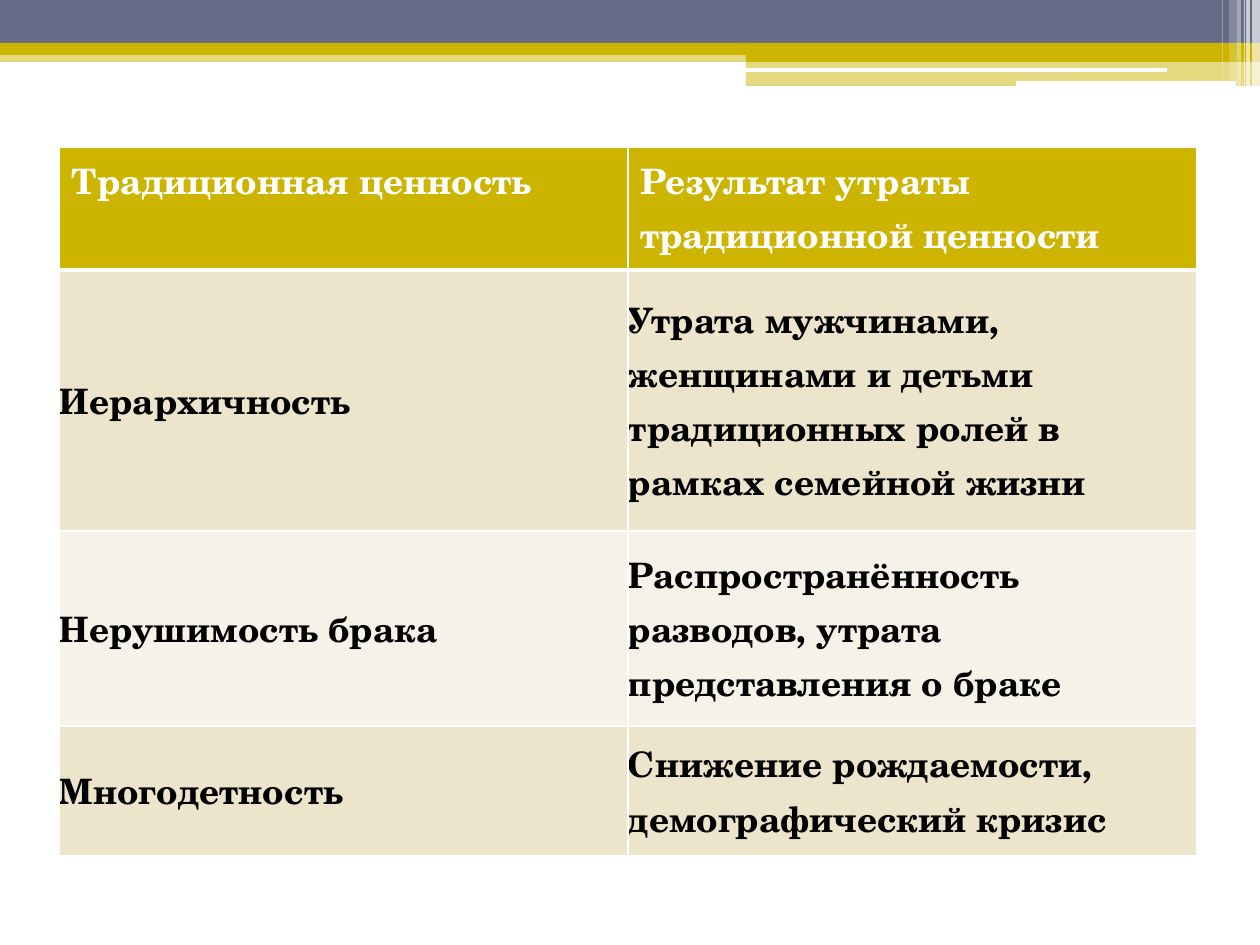
from typing import NamedTuple

from lxml.etree import SubElement
from pptx import Presentation
from pptx.dml.color import RGBColor
from pptx.enum.shapes import MSO_SHAPE as Kind
from pptx.enum.text import MSO_ANCHOR as Anchor
from pptx.oxml.ns import qn
from pptx.util import Emu, Pt

SCALE = 914400 / 126
FONT = "TeX Gyre Schola"
GOLD, SLATE, WHITE, BLACK = "CCB400", "646B86", "FFFFFF", "000000"
SAND, CREAM = "ECE5CC", "F6F2E7"


class Band(NamedTuple):
    left: int
    top: int
    width: int
    height: int
    color: str
    alpha: int = 100
    kind: Kind = Kind.RECTANGLE


class Row(NamedTuple):
    height: int
    fill: str
    texts: tuple[str, str]
    head: bool = False


BANDS = [
    Band(0, 50, 1260, 12, GOLD, 50),
    Band(0, 0, 1260, 43, SLATE),
    Band(0, 43, 1260, 12, GOLD),
    Band(746, 49, 514, 13, GOLD),
    Band(746, 61, 514, 25, GOLD, 50),
    Band(745, 68, 422, 4, WHITE, kind=Kind.ROUNDED_RECTANGLE),
    Band(1016, 81, 220, 5, WHITE, kind=Kind.ROUNDED_RECTANGLE),
    Band(1252, 0, 8, 86, WHITE, 65),
    Band(1246, 0, 4, 86, WHITE, 65),
    Band(1244, 0, 1, 86, WHITE, 60),
    Band(1237, 0, 4, 86, WHITE, 40),
    Band(1229, 0, 8, 81, WHITE, 20),
    Band(1222, 0, 1, 81, WHITE, 30),
]

ROWS = [
    Row(123, GOLD, ("Традиционная ценность",
                    "Результат утраты традиционной ценности"), True),
    Row(261, SAND, ("Иерархичность",
                    "Утрата мужчинами, женщинами и детьми традиционных ролей "
                    "в рамках семейной жизни")),
    Row(195, CREAM, ("Нерушимость брака",
                     "Распространённость разводов, утрата представления о браке")),
    Row(130, SAND, ("Многодетность",
                    "Снижение рождаемости, демографический кризис")),
]


def px(size: int) -> Emu:
    return Emu(round(size * SCALE))


def paint(target, color: str) -> None:
    target.solid()
    target.fore_color.rgb = RGBColor.from_string(color)


def draw_band(slide, band: Band) -> None:
    box = map(px, (band.left, band.top, band.width, band.height))
    shape = slide.shapes.add_shape(band.kind, *box)
    shape.shadow.inherit = False
    shape.line.fill.background()
    paint(shape.fill, band.color)
    if band.alpha < 100:
        color = shape.fill._xPr.find(qn("a:solidFill"))[0]
        SubElement(color, qn("a:alpha"), val=str(band.alpha * 1000))


def draw_edges(cell, low: int) -> None:
    props = cell._tc.get_or_add_tcPr()
    for side, width in zip("LRTB", (1, 1, 1, low)):
        line = SubElement(props, qn(f"a:ln{side}"), w=str(Pt(width)))
        fill = SubElement(line, qn("a:solidFill"))
        SubElement(fill, qn("a:srgbClr"), val=WHITE)


def fill_cell(cell, row: Row, text: str, low: int) -> None:
    draw_edges(cell, low)
    paint(cell.fill, row.fill)
    if not row.head:
        cell.vertical_anchor = Anchor.MIDDLE
        cell.margin_left = cell.margin_right = 0
        cell.margin_top = cell.margin_bottom = 0
    cell.text_frame.text = text
    font = cell.text_frame.paragraphs[0].runs[0].font
    font.name, font.size, font.bold = FONT, Pt(20), True
    paint(font.fill, WHITE if row.head else BLACK)


def draw_table(slide, rows: list[Row]) -> None:
    high = sum(row.height for row in rows)
    frame = slide.shapes.add_table(len(rows), 2, px(59), px(147), px(1138), px(high))
    table = frame.table
    table.horz_banding = False
    for line, row in zip(table.rows, rows):
        line.height = px(row.height)
        for cell, text in zip(line.cells, row.texts):
            fill_cell(cell, row, text, 3 if row.head else 1)


def main() -> None:
    deck = Presentation()
    deck.slide_width, deck.slide_height = px(1260), px(945)
    slide = deck.slides.add_slide(deck.slide_layouts[6])
    for band in BANDS:
        draw_band(slide, band)
    draw_table(slide, ROWS)
    deck.save("out.pptx")


if __name__ == "__main__":
    main()
